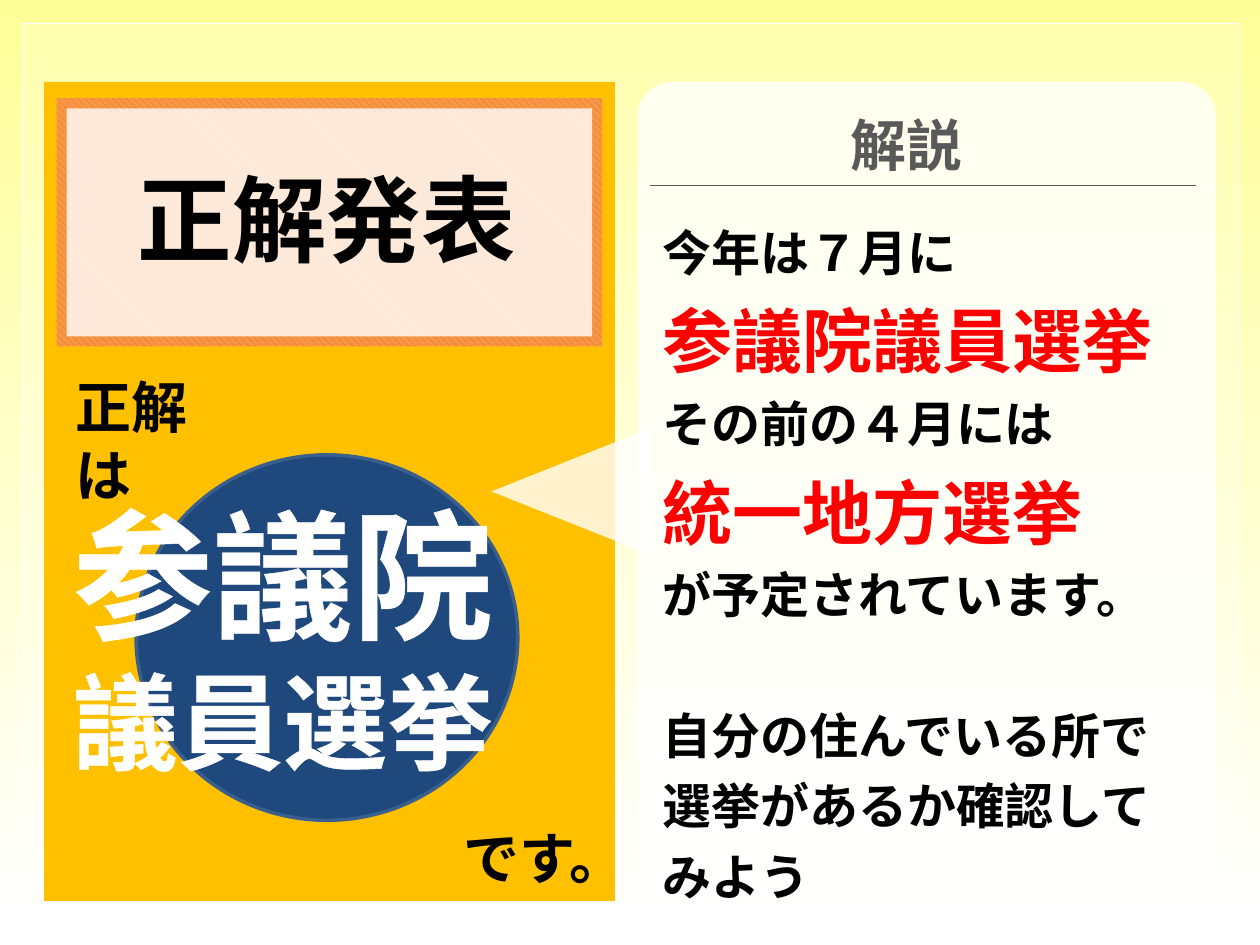
from dataclasses import dataclass

import lxml.etree
import pptx
import pptx.dml.color
import pptx.enum.dml
import pptx.enum.shapes
import pptx.enum.text
import pptx.oxml.ns
import pptx.util

COLORS = {
    "sky": "FFFF99",
    "white": "FFFFFF",
    "gold": "FFC000",
    "stripe": "E46C0A",
    "orange": "F79646",
    "navy": "1F497D",
    "rim": "3A5F8C",
    "black": "000000",
    "gray": "595959",
    "red": "FF0000",
}
FONT = "Noto Sans CJK JP"
WIDTH = pptx.util.Inches(10)
HEIGHT = pptx.util.Inches(7.5)
SHAPE = pptx.enum.shapes.MSO_SHAPE
ALIGN = pptx.enum.text.PP_ALIGN


@dataclass
class Area:
    """A rectangle in percent of the slide's width and height."""
    left: float
    top: float
    width: float
    height: float

    def lengths(self) -> tuple[int, int, int, int]:
        return (across(self.left), down(self.top), across(self.width), down(self.height))


@dataclass
class Panel:
    area: Area
    color: str
    kind: SHAPE = SHAPE.RECTANGLE
    opacity: int = 100
    line: str = ""
    line_width: float = 0
    rotation: int = 0


@dataclass
class Line:
    text: str
    size: int
    color: str = "black"
    space_before: int = 0


def across(percent: float) -> int:
    return int(WIDTH * percent / 100)


def down(percent: float) -> int:
    return int(HEIGHT * percent / 100)


def rgb(name: str) -> pptx.dml.color.RGBColor:
    return pptx.dml.color.RGBColor.from_string(COLORS[name])


def add_tag(parent, tag: str, **attributes: str):
    return lxml.etree.SubElement(parent, pptx.oxml.ns.qn(tag), **attributes)


def add_panel(page, panel: Panel):
    shape = page.shapes.add_shape(panel.kind, *panel.area.lengths())
    shape.shadow.inherit = False
    shape.rotation = panel.rotation
    shape.fill.solid()
    shape.fill.fore_color.rgb = rgb(panel.color)
    if panel.opacity < 100:
        color = shape.element.spPr.find(".//" + pptx.oxml.ns.qn("a:srgbClr"))
        add_tag(color, "a:alpha", val=str(panel.opacity * 1000))
    if panel.line:
        shape.line.color.rgb = rgb(panel.line)
        shape.line.width = pptx.util.Pt(panel.line_width)
    else:
        shape.line.fill.background()
    return shape


def write(box, lines: list[Line], wrap: bool = False, align: ALIGN = ALIGN.LEFT,
          spacing: float = 1.0) -> None:
    frame = box.text_frame
    frame.text = "\n".join(line.text for line in lines)
    frame.word_wrap = wrap
    frame.auto_size = pptx.enum.text.MSO_AUTO_SIZE.SHAPE_TO_FIT_TEXT
    frame.vertical_anchor = pptx.enum.text.MSO_ANCHOR.TOP
    for para, line in zip(frame.paragraphs, lines):
        para.alignment = align
        para.line_spacing = spacing
        para.space_before = pptx.util.Pt(line.space_before)
        for span in para.runs:
            span.font.size = pptx.util.Pt(line.size)
            span.font.bold = True
            span.font.color.rgb = rgb(line.color)
            span.font.name = FONT
            add_tag(span.font._element, "a:ea", typeface=FONT)


def outline_text(box, color: str, width: float) -> None:
    for para in box.text_frame.paragraphs:
        for span in para.runs:
            properties = span.font._element
            outline = add_tag(properties, "a:ln", w=str(pptx.util.Pt(width)))
            add_tag(add_tag(outline, "a:solidFill"), "a:srgbClr", val=COLORS[color])
            properties.insert(0, outline)


def paint_background(page) -> None:
    fill = page.background.fill
    fill.gradient()
    fill.gradient_angle = 270
    for stop, position, color in zip(fill.gradient_stops, (0, 0.98), ("sky", "white")):
        stop.position = position
        stop.color.rgb = rgb(color)


def add_rule(page, left: float, right: float, top: float) -> None:
    rule = page.shapes.add_connector(
        pptx.enum.shapes.MSO_CONNECTOR.STRAIGHT,
        across(left), down(top), across(right), down(top))
    rule.line.color.rgb = rgb("gray")
    rule.line.width = pptx.util.Pt(0.75)
    add_tag(rule.element.spPr, "a:effectLst")


def add_text(page, area: Area, lines: list[Line], **options):
    box = page.shapes.add_textbox(*area.lengths())
    write(box, lines, **options)
    return box


def add_panels(page) -> None:
    add_panel(page, Panel(Area(1.8, 2.53, 96.5, 95.07), "white", opacity=20,
                          line="white", line_width=0.5))
    add_panel(page, Panel(Area(3.5, 8.67, 45.3, 86.67), "gold"))
    border = add_panel(page, Panel(Area(4.5, 10.4, 43.3, 26.27), "orange"))
    border.fill.patterned()
    border.fill.pattern = pptx.enum.dml.MSO_PATTERN.WIDE_DOWNWARD_DIAGONAL
    border.fill.fore_color.rgb = rgb("stripe")
    border.fill.back_color.rgb = rgb("orange")
    add_panel(page, Panel(Area(5.3, 11.47, 41.7, 24.13), "white", opacity=80))
    notes = add_panel(page, Panel(Area(50.6, 8.67, 45.9, 86.67), "white",
                                  SHAPE.ROUNDED_RECTANGLE, opacity=80))
    notes.adjustments[0] = 0.06
    add_panel(page, Panel(Area(40.3, 43.47, 10.2, 17.07), "white",
                          SHAPE.ISOSCELES_TRIANGLE, opacity=80, rotation=270))
    add_panel(page, Panel(Area(10.8, 48.13, 30.3, 38.67), "navy", SHAPE.OVAL,
                          line="rim", line_width=2))


def add_title(page) -> None:
    title = page.shapes.title
    title.left, title.top, title.width, title.height = Area(9.8, 16.4, 32.3, 13.47).lengths()
    write(title, [Line("正解発表", 54)], align=ALIGN.CENTER)
    page.shapes.element.append(title.element)  # in front of the panels


def main() -> None:
    deck = pptx.Presentation()
    deck.slide_width, deck.slide_height = WIDTH, HEIGHT
    page = deck.slides.add_slide(deck.slide_layouts.get_by_name("Title Only"))
    paint_background(page)
    add_panels(page)
    add_title(page)
    add_text(page, Area(5, 38.8, 15, 8.53), [Line("正解は", 32)], wrap=True)
    add_text(page, Area(35.8, 86.53, 12.8, 8.53), [Line("です。", 32)])
    add_text(page, Area(66.5, 11.07, 11, 8.53), [Line("解説", 32, "gray")])
    add_rule(page, 51.6, 94.9, 19.6)
    add_text(page, Area(51.6, 21.6, 43.3, 68.13), [
        Line("今年は７月に", 28),
        Line("参議院議員選挙", 40, "red"),
        Line("その前の４月には", 28),
        Line("統一地方選挙", 40, "red"),
        Line("が予定されています。", 28),
        Line("自分の住んでいる所で選挙があるか確認してみよう", 28, space_before=40),
    ], wrap=True, spacing=1.2)
    answer = add_text(page, Area(4.8, 51.07, 42.1, 32.8), [
        Line("参議院", 80, "white"),
        Line("議員選挙", 60, "white"),
    ], wrap=True, align=ALIGN.JUSTIFY)
    outline_text(answer, "white", 1.5)
    deck.save("out.pptx")


if __name__ == "__main__":
    main()
